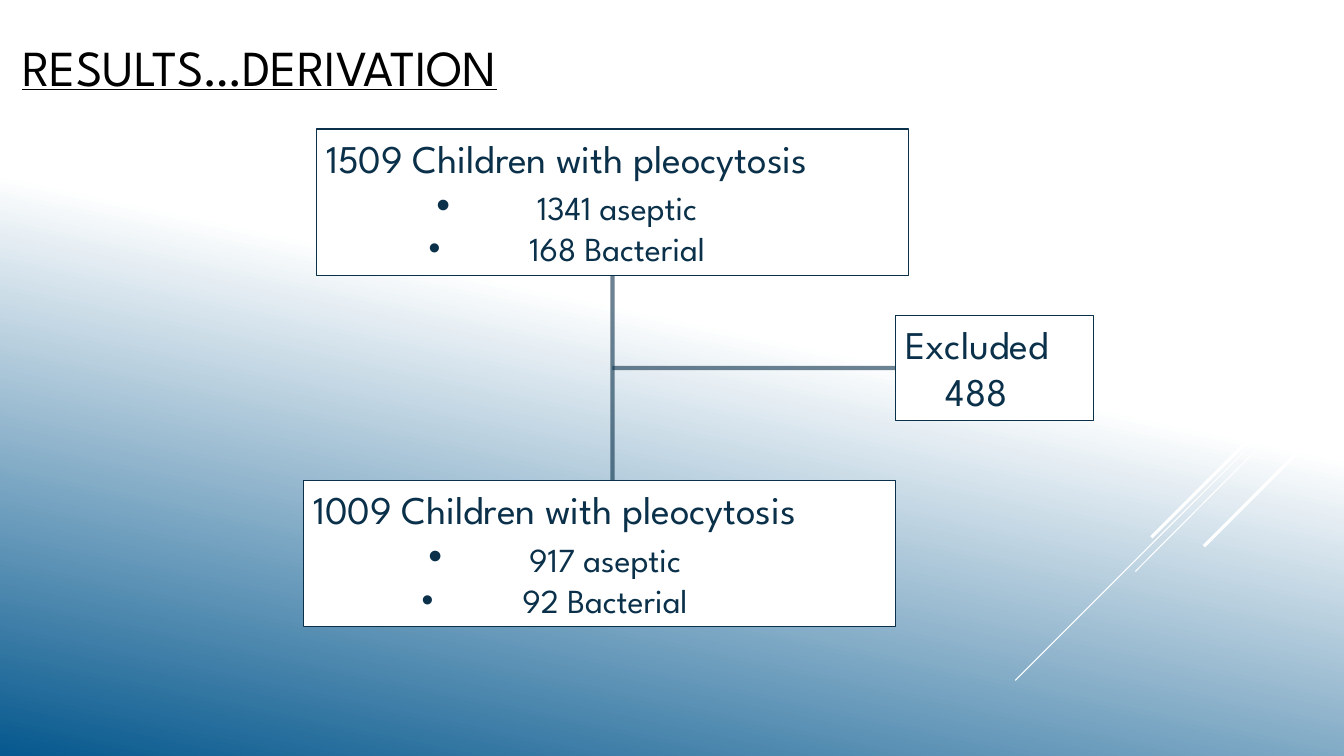
from dataclasses import dataclass

from lxml.etree import SubElement
from pptx import Presentation
from pptx.dml.color import RGBColor
from pptx.enum.shapes import MSO_CONNECTOR, MSO_SHAPE
from pptx.enum.text import MSO_ANCHOR, MSO_AUTO_SIZE, PP_ALIGN
from pptx.oxml.ns import qn
from pptx.util import Inches, Pt

# Content: each box is (left, top, width, height) and its paragraphs,
# each paragraph is (runs of (text, size role), format)
TITLE = "RESULTS…DERIVATION"
BULLET = {"align": PP_ALIGN.CENTER, "bullet": True}
CENTER = {"align": PP_ALIGN.CENTER}


def cohort(total, aseptic, bacterial):
    return [
        ([(f"{total} Children with pleocytosis", "head")], {}),
        ([("\t", "head"), (f"{aseptic} aseptic", "item")], BULLET),
        ([(f"\t{bacterial} Bacterial", "item")], BULLET),
    ]


BOXES = {
    "all": ((3.14, 1.28, 5.87, 1.45), cohort(1509, 1341, 168)),
    "kept": ((3.01, 4.77, 5.87, 1.45), cohort(1009, 917, 92)),
    "excluded": ((8.88, 3.13, 1.97, 1.04),
                 [([("Excluded", "head")], {}), ([("488", "head")], CENTER)]),
}

# Diagonal rays from the right edge: (start y, end x, end y, weight)
RAYS = [
    (3.24, 12.33, 4.24, 0.75),
    (3.49, 10.07, 6.75, 0.75),
    (3.59, 11.26, 5.67, 0.75),
    (3.42, 11.42, 5.33, 2.25),
    (4.03, 11.94, 5.42, 2.25),
]
SLIDE_W, SLIDE_H = 13.33, 7.5


@dataclass(frozen=True)
class Theme:
    font: str = "League Spartan"
    black: RGBColor = RGBColor(0, 0, 0)
    white: RGBColor = RGBColor(0xFF, 0xFF, 0xFF)
    navy: RGBColor = RGBColor(0x0A, 0x30, 0x4A)
    blue: RGBColor = RGBColor(0x06, 0x58, 0x8E)
    title: int = 36
    head: int = 28
    item: int = 24


THEME = Theme()


def add_text(p, text, size="head", color=THEME.navy, underline=None):
    r = p.add_run()
    r.text = text
    r.font.name = THEME.font
    r.font.size = Pt(getattr(THEME, size))
    r.font.color.rgb = color
    r.font.underline = underline


def add_bullet(p):
    pPr = p._p.get_or_add_pPr()
    pPr.set("marL", str(Inches(0.5)))
    pPr.set("indent", str(-Inches(0.5)))
    SubElement(pPr, qn("a:buFont")).set("typeface", "Arial")
    SubElement(pPr, qn("a:buChar")).set("char", "•")


def add_box(shapes, place, paragraphs):
    sp = shapes.add_shape(MSO_SHAPE.RECTANGLE, *map(Inches, place))
    sp.shadow.inherit = False
    sp.fill.solid()
    sp.fill.fore_color.rgb = THEME.white
    sp.line.color.rgb = THEME.navy
    sp.line.width = Pt(0.75)
    tf = sp.text_frame
    tf.word_wrap = False
    tf.auto_size = MSO_AUTO_SIZE.SHAPE_TO_FIT_TEXT
    tf.vertical_anchor = MSO_ANCHOR.TOP
    for i, (runs, fmt) in enumerate(paragraphs):
        p = tf.add_paragraph() if i else tf.paragraphs[0]
        p.alignment = fmt.get("align", PP_ALIGN.LEFT)
        if fmt.get("bullet"):
            add_bullet(p)
        for text, size in runs:
            add_text(p, text, size)
    return sp


def add_line(shapes, x1, y1, x2, y2, color, weight, opacity=None):
    line = shapes.add_connector(MSO_CONNECTOR.STRAIGHT,
                                *map(Inches, (x1, y1, x2, y2)))
    line.line.color.rgb = color
    line.line.width = Pt(weight)
    spPr = line._element.spPr
    if opacity is not None:
        clr = next(spPr.iter(qn("a:srgbClr")))
        SubElement(clr, qn("a:alpha")).set("val", str(opacity * 1000))
    SubElement(spPr, qn("a:effectLst"))
    return line


def main():
    prs = Presentation()
    prs.slide_width, prs.slide_height = Inches(SLIDE_W), Inches(SLIDE_H)
    slide = prs.slides.add_slide(prs.slide_layouts[5])

    # Background gradient
    fill = slide.background.fill
    fill.gradient()
    fill.gradient_angle = 360 - 102
    stops = ((0.44, THEME.white), (1, THEME.blue))
    for stop, (position, color) in zip(fill.gradient_stops, stops):
        stop.position = position
        stop.color.rgb = color

    # Decorative rays
    rays = slide.shapes.add_group_shape()
    for y1, x2, y2, weight in RAYS:
        add_line(rays.shapes, SLIDE_W, y1, x2, y2, THEME.white, weight)

    # Title
    title = slide.shapes.title
    title.left, title.top = Inches(0.12), Inches(0.04)
    title.width, title.height = Inches(9.33), Inches(1.24)
    tf = title.text_frame
    tf.word_wrap = True
    tf.auto_size = MSO_AUTO_SIZE.NONE
    tf.vertical_anchor = MSO_ANCHOR.MIDDLE
    p = tf.paragraphs[0]
    p.alignment = PP_ALIGN.LEFT
    add_text(p, TITLE, "title", THEME.black, underline=True)

    # Flow boxes
    boxes = {name: add_box(slide.shapes, *box) for name, box in BOXES.items()}

    # Flow lines: a trunk down from the first box, a branch to the excluded
    left, top, width, height = BOXES["all"][0]
    trunk_x = left + width / 2
    kept_top = BOXES["kept"][0][1]
    trunk = add_line(slide.shapes, trunk_x, top + height, trunk_x, kept_top,
                     THEME.navy, 3, opacity=60)
    trunk.begin_connect(boxes["all"], 2)

    left, top, width, height = BOXES["excluded"][0]
    branch_y = top + height / 2
    branch = add_line(slide.shapes, left, branch_y, trunk_x, branch_y,
                      THEME.navy, 3, opacity=60)
    branch.begin_connect(boxes["excluded"], 1)

    prs.save("out.pptx")


if __name__ == "__main__":
    main()
